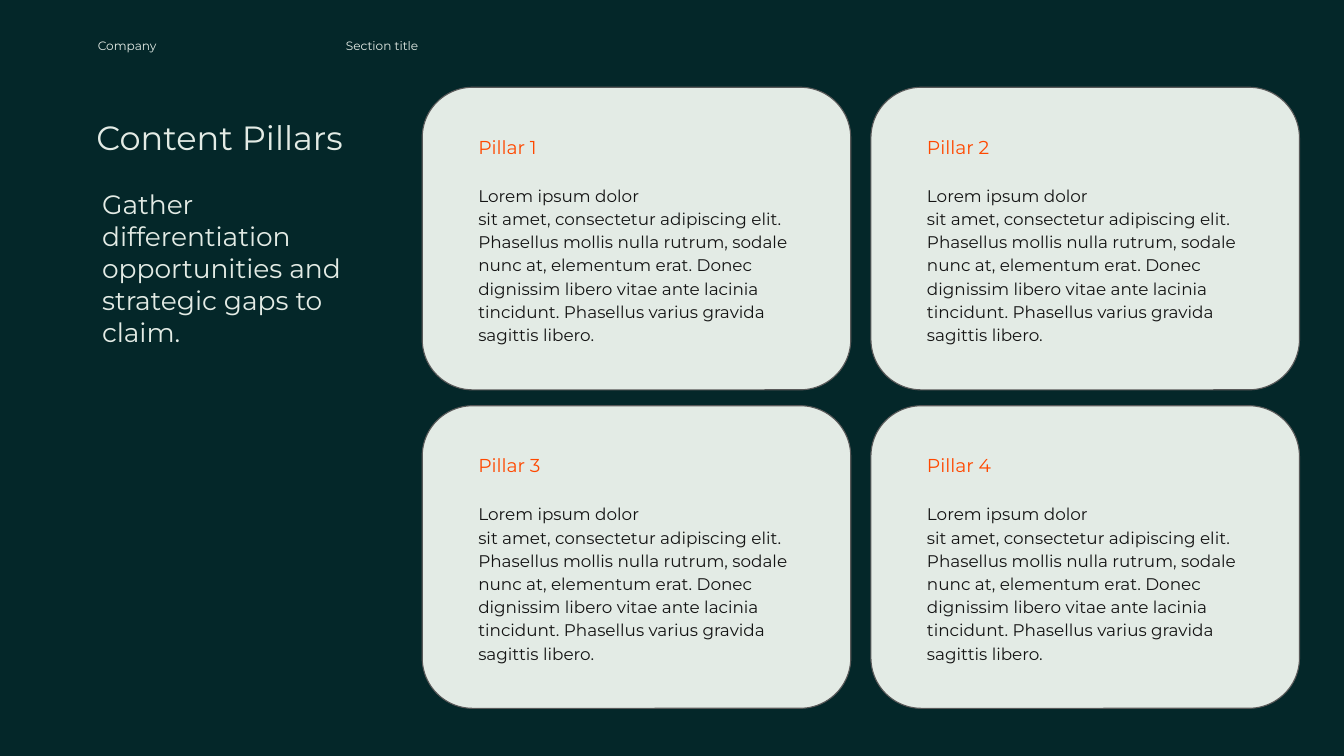
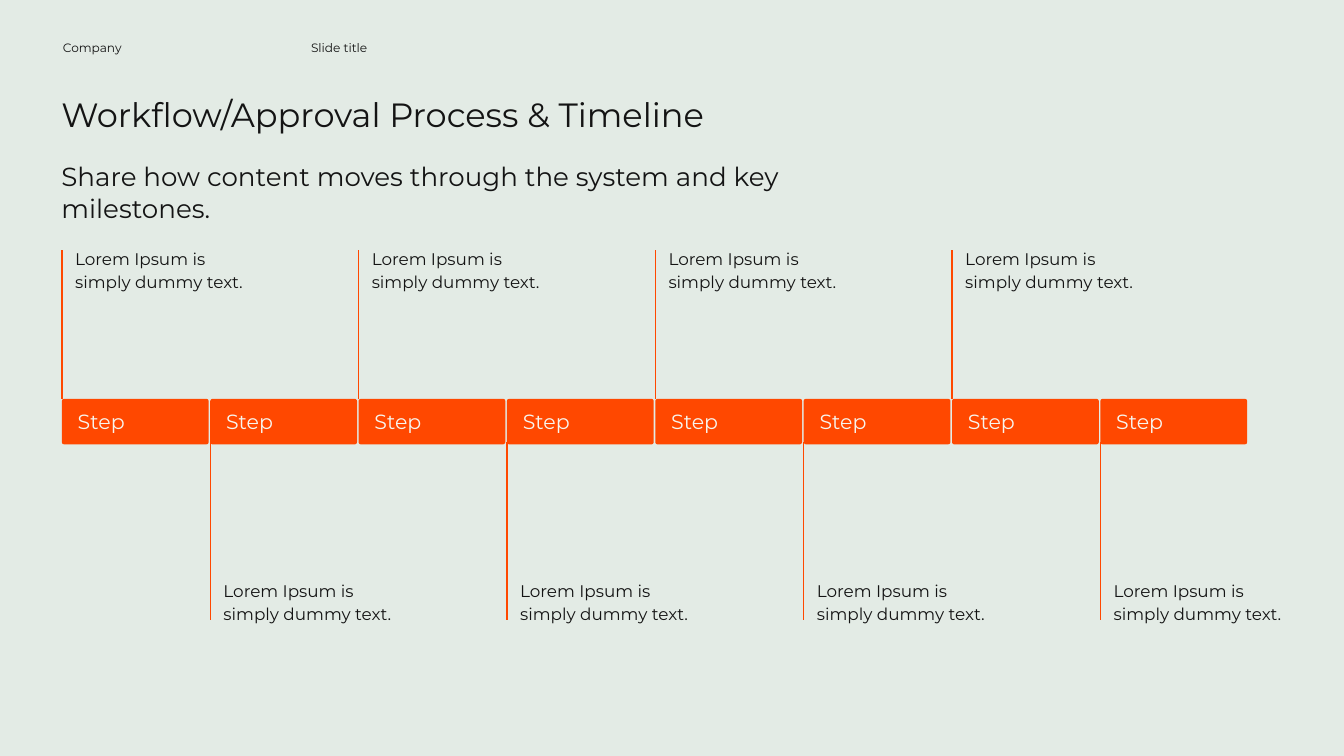
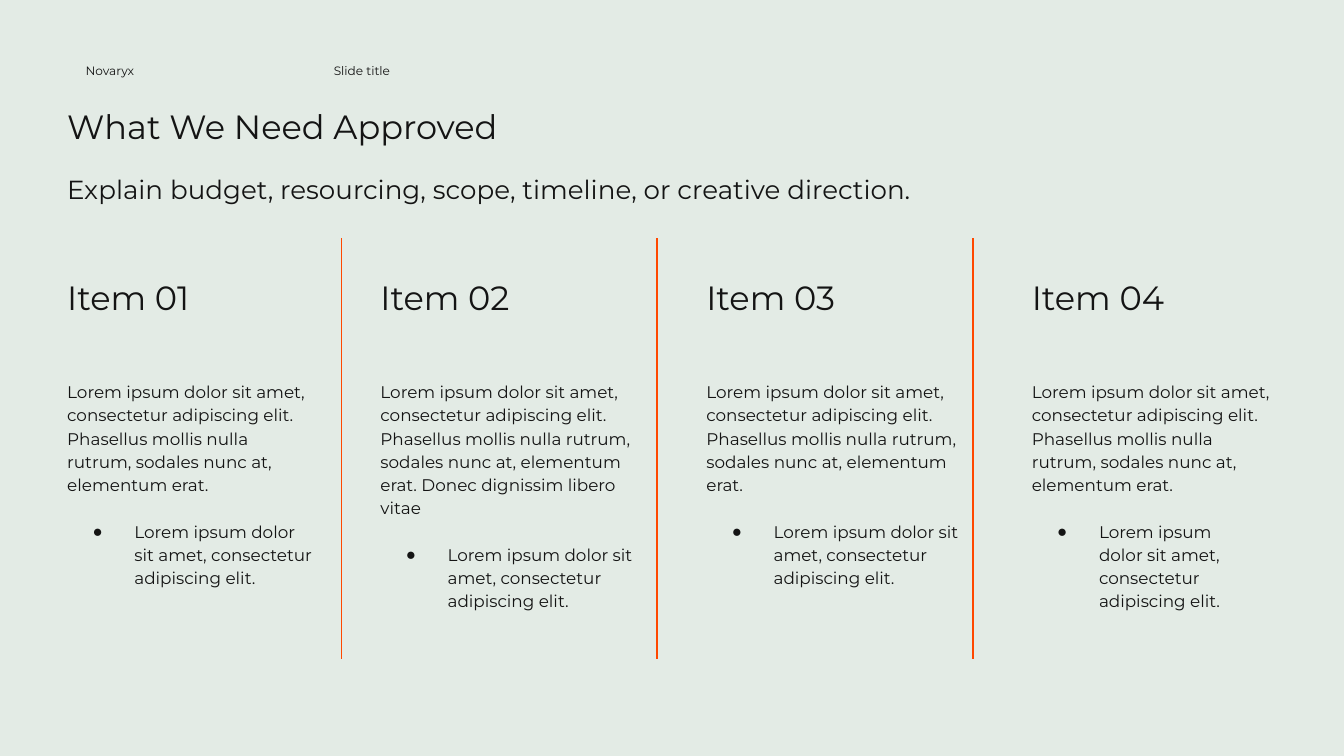
import dataclasses

import lxml.etree
import pptx
import pptx.dml.color
import pptx.enum.shapes
import pptx.enum.text
import pptx.oxml.ns
import pptx.util

Cm = pptx.util.Cm
Pt = pptx.util.Pt
qn = pptx.oxml.ns.qn
TOP = pptx.enum.text.MSO_ANCHOR.TOP
BOTTOM = pptx.enum.text.MSO_ANCHOR.BOTTOM


@dataclasses.dataclass(frozen=True)
class Theme:
    font: str = "Montserrat"
    dark: str = "042729"
    pale: str = "E3EBE5"
    ink: str = "141414"
    accent: str = "FF4800"
    cream: str = "F8F5EE"
    edge: str = "595959"
    tiny: float = 6.5
    small: float = 9
    label: float = 10
    step: float = 11
    lead: float = 14
    title: float = 18
    loose: float = 1.15
    gap: float = 12.5
    rule: float = 0.75


THEME = Theme()

PILLAR = ("Lorem ipsum dolor \vsit amet, consectetur adipiscing elit. "
          "Phasellus mollis nulla rutrum, sodale nunc at, elementum erat. "
          "Donec dignissim libero vitae ante lacinia tincidunt. "
          "Phasellus varius gravida sagittis libero.")
NOTE = "Lorem Ipsum is simply dummy text."
ITEM = ("Lorem ipsum dolor sit amet, consectetur adipiscing elit. "
        "Phasellus mollis nulla rutrum, sodales nunc at, elementum erat.")
POINT = "Lorem ipsum dolor sit amet, consectetur adipiscing elit."

# Each column: left, width, text, bullet
ITEMS = [
    (1.02, 5.21, ITEM, POINT),
    (6.94, 5.38, ITEM + " Donec dignissim libero vitae", POINT),
    (13.1, 5.31, ITEM, POINT),
    (19.25, 5.13, ITEM, POINT.replace("ipsum ", "ipsum \v")),
]


def tint(code):
    return pptx.dml.color.RGBColor.from_string(code)


def place(shape, box):
    shape.left, shape.top, shape.width, shape.height = map(Cm, box)
    return shape


def mark(para, bullet):
    """Give the paragraph a hanging bullet, or clear the one it inherits."""
    props = para._p.get_or_add_pPr()
    props.set("marL", str(Cm(1.27) if bullet else 0))
    props.set("indent", str(Cm(-0.79) if bullet else 0))
    if bullet:
        lxml.etree.SubElement(props, qn("a:buChar"), char="●")
    else:
        lxml.etree.SubElement(props, qn("a:buNone"))


def write(shape, text, size=THEME.small, color=THEME.ink, space=1.0,
          inset=0.25, anchor=TOP, points=False):
    """Fill a shape; with points, paragraphs after the first get bullets."""
    frame = shape.text_frame
    frame.word_wrap = True
    frame.auto_size = pptx.enum.text.MSO_AUTO_SIZE.NONE
    frame.vertical_anchor = anchor
    frame.margin_left = frame.margin_right = Cm(inset)
    frame.margin_top = frame.margin_bottom = Cm(inset)
    frame.text = text
    for num, para in enumerate(frame.paragraphs):
        bullet = points and num > 0
        para.alignment = pptx.enum.text.PP_ALIGN.LEFT
        para.line_spacing = space
        para.space_before = Pt(THEME.gap if bullet else 0)
        para.space_after = Pt(0)
        mark(para, bullet)
        for run in para.runs:
            run.font.name = THEME.font
            run.font.size = Pt(size)
            run.font.bold = False
            run.font.color.rgb = tint(color)
        for stop in para._p.findall(qn("a:br")):
            lxml.etree.SubElement(stop, qn("a:rPr"), sz=str(int(size * 100)))


def label(shapes, text, box, **look):
    write(shapes.add_textbox(*map(Cm, box)), text, **look)


def block(shapes, box, round_by, fill, line=None):
    shape = shapes.add_shape(
        pptx.enum.shapes.MSO_SHAPE.ROUNDED_RECTANGLE, *map(Cm, box))
    shape.adjustments[0] = round_by
    shape.shadow.inherit = False
    shape.fill.solid()
    shape.fill.fore_color.rgb = tint(fill)
    if line:
        shape.line.color.rgb = tint(line)
        shape.line.width = Pt(0.59)
    else:
        shape.line.fill.background()


def rule(shapes, x, start, end):
    """Draw an upright accent line."""
    line = shapes.add_connector(
        pptx.enum.shapes.MSO_CONNECTOR.STRAIGHT,
        Cm(x), Cm(start), Cm(x), Cm(end))
    line.line.color.rgb = tint(THEME.accent)
    line.line.width = Pt(THEME.rule)
    lxml.etree.SubElement(line._element.spPr, qn("a:effectLst"))


def page(deck, layout, ground, color, names, corner, title, box):
    """Start a slide with its ground, running header and title."""
    slide = deck.slides.add_slide(deck.slide_layouts.get_by_name(layout))
    slide.background.fill.solid()
    slide.background.fill.fore_color.rgb = tint(ground)
    left, top = corner
    for num, name in enumerate(names):
        label(slide.shapes, name, (left + 4.69 * num, top, 4.6, 0.71),
              size=THEME.tiny, color=color)
    write(place(slide.shapes.title, box), title,
          size=THEME.title, color=color)
    return slide


def card(shapes, title, box):
    left, top, width, height = box
    block(shapes, box, 0.167, THEME.pale, THEME.edge)
    inner = width - 1.62
    label(shapes, title, (left + 0.81, top + 0.66, inner, 0.94),
          size=THEME.label, color=THEME.accent)
    label(shapes, PILLAR, (left + 0.81, top + 1.55, inner, 3.56),
          space=THEME.loose)


def pillars(deck):
    slide = page(deck, "Title and Content", THEME.dark, THEME.pale,
                 ("Company", "Section title"), (1.6, 0.48),
                 "Content Pillars", (1.57, 1.96, 5.66, 1.27))
    write(place(slide.placeholders[1], (1.57, 3.2, 6.02, 3.1)),
          "Gather differentiation opportunities and strategic gaps to claim.",
          size=14.2, color=THEME.pale, inset=0.36)
    for num in range(4):
        row, col = divmod(num, 2)
        card(slide.shapes, f"Pillar {num + 1}",
             (7.98 + 8.48 * col, 1.65 + 6.02 * row, 8.1, 5.72))


def note(shapes, left, bar, above):
    """Hang a note and its line above or below the bar (top, height)."""
    top, height = bar
    parts = shapes.add_group_shape().shapes
    if above:
        start, end, head, anchor = top, top - 2.82, top - 3.15, TOP
    else:
        start = top + height - 0.04
        end, head, anchor = start + 3.35, start + 1.52, BOTTOM
    label(parts, NOTE, (left, head, 3.86, 2.16),
          space=THEME.loose, anchor=anchor)
    rule(parts, left, start, end)


def steps(shapes, box, count=8):
    left, top, width, height = box
    gap = 0.03
    wide = (width - gap * (count - 1)) / count
    spots = [left + (wide + gap) * num for num in range(count)]
    for num, x in enumerate(spots):
        note(shapes, x, (top, height), num % 2 == 0)
    for x in spots:
        block(shapes, (x, top, wide, height), 0.05, THEME.accent)
        label(shapes, "Step", (x + 0.3, top + 0.2, wide - 0.3, 0.53),
              size=THEME.step, color=THEME.cream, inset=0)


def workflow(deck):
    slide = page(deck, "Title and Content", THEME.pale, THEME.ink,
                 ("Company", "Slide title"), (0.94, 0.51),
                 "Workflow/Approval Process & Timeline",
                 (0.91, 1.52, 13.82, 1.27))
    write(place(slide.placeholders[1], (0.91, 2.79, 16.89, 0.86)),
          "Share how content moves through the system and key milestones.",
          size=THEME.lead)
    steps(slide.shapes, (1.17, 7.54, 22.4, 0.86))


def column(slide, num, box, text, point):
    left, top, width, height = box
    label(slide.shapes, f"Item {num:02}", (left, top, width, 1.27),
          size=THEME.title)
    write(place(slide.placeholders[num],
                (left, top + 1.93, width, height - 1.93)),
          f"{text}\n{point}", space=THEME.loose, points=True)


def approval(deck):
    slide = page(deck, "Comparison", THEME.pale, THEME.ink,
                 ("Novaryx", "Slide title"), (1.37, 0.94),
                 "What We Need Approved", (1.02, 1.75, 13.82, 1.27))
    label(slide.shapes,
          "Explain budget, resourcing, scope, timeline, "
          "or creative direction.",
          (1.02, 3.02, 16.89, 0.86), size=THEME.lead)
    for num, (left, width, text, point) in enumerate(ITEMS, 1):
        column(slide, num, (left, 4.98, width, 8.03), text, point)
    for num in range(len(ITEMS) - 1):
        rule(slide.shapes, 6.45 + 5.97 * num, 4.5, 12.45)


def main():
    deck = pptx.Presentation()
    deck.slide_width, deck.slide_height = Cm(25.4), Cm(14.29)
    pillars(deck)
    workflow(deck)
    approval(deck)
    deck.save("out.pptx")


if __name__ == "__main__":
    main()
